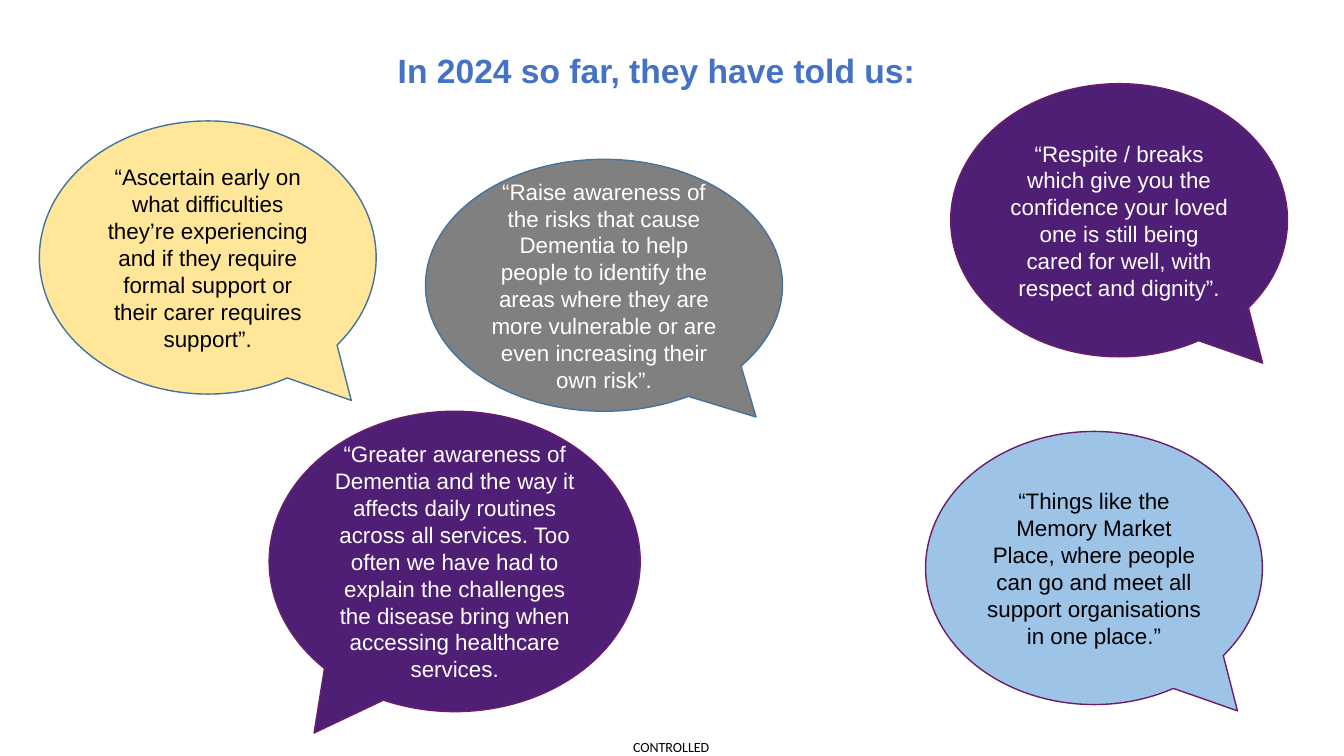
import pptx
import pptx.util
from pptx.dml.color import RGBColor
from pptx.enum.shapes import MSO_SHAPE
from pptx.enum.text import MSO_ANCHOR, PP_ALIGN

SLIDE_WIDTH = pptx.util.Inches(13.33)
SLIDE_HEIGHT = pptx.util.Inches(7.5)

BLACK, WHITE = "000000", "FFFFFF"
BLUE_EDGE, PURPLE_EDGE, PURPLE = "43739E", "6C1D6A", "4F1F76"
TAIL_RIGHT, TAIL_LEFT = (0.426, 0.523), (-0.379, 0.571)
BUBBLE_SIZE = (25.06, 36.13)

# Quotes: box in percent of the slide, tail, fill, edge, text colour, wording
QUOTES = [
    ((31.66, 21.07, 26.56, 33.33), TAIL_RIGHT, "808080", BLUE_EDGE, WHITE,
     "“Raise awareness of the risks that cause Dementia to help people to "
     "identify the areas where they are more vulnerable or are even "
     "increasing their own risk”."),
    ((2.93, 16, *BUBBLE_SIZE), TAIL_RIGHT, "FFE699", BLUE_EDGE, BLACK,
     "“Ascertain early on what difficulties they’re experiencing and if they "
     "require formal support or their carer requires support”."),
    ((20.03, 54.4, 27.61, 39.73), TAIL_LEFT, PURPLE, PURPLE_EDGE, WHITE,
     "“Greater awareness of Dementia and the way it affects daily routines "
     "across all services. Too often we have had to explain the challenges "
     "the disease bring when accessing healthcare services."),
    ((70.74, 11.07, *BUBBLE_SIZE), TAIL_RIGHT, PURPLE, PURPLE_EDGE, WHITE,
     "“Respite / breaks which give you the confidence your loved one is "
     "still being cared for well, with respect and dignity”."),
    ((68.87, 57.07, *BUBBLE_SIZE), TAIL_RIGHT, "9DC3E6", PURPLE_EDGE, BLACK,
     "“Things like the Memory Market Place, where people can go and meet all "
     "support organisations in one place.”"),
]


def color(hex_string):
    return RGBColor.from_string(hex_string)


def place(box):
    """Turn percentages of the slide into left, top, width and height."""
    left, top, width, height = box
    return (int(SLIDE_WIDTH * left / 100), int(SLIDE_HEIGHT * top / 100),
            int(SLIDE_WIDTH * width / 100), int(SLIDE_HEIGHT * height / 100))


def write(frame, text, size=16, font="Arial", ink=BLACK, bold=False,
          align=PP_ALIGN.CENTER, anchor=MSO_ANCHOR.MIDDLE, wrap=True):
    frame.word_wrap = wrap
    frame.vertical_anchor = anchor
    paragraph = frame.paragraphs[0]
    paragraph.alignment = align
    run = paragraph.add_run()
    run.text = text
    run.font.size = pptx.util.Pt(size)
    run.font.name = font
    run.font.bold = bold
    run.font.color.rgb = color(ink)


def add_heading(slide, box):
    heading = slide.shapes.add_textbox(*place(box))
    write(heading.text_frame, "In 2024 so far, they have told us:",
          size=24, ink="4472C4", bold=True, wrap=False)


def add_marking(slide, box):
    frame = slide.shapes.add_textbox(*place(box)).text_frame
    frame.margin_left = frame.margin_right = 0
    frame.margin_top = frame.margin_bottom = 0
    write(frame, "CONTROLLED", size=10, font="Calibri",
          align=PP_ALIGN.LEFT, anchor=MSO_ANCHOR.TOP, wrap=False)


def add_quote(slide, box, tail, fill, edge, ink, wording):
    bubble = slide.shapes.add_shape(MSO_SHAPE.OVAL_CALLOUT, *place(box))
    bubble.adjustments[0], bubble.adjustments[1] = tail
    bubble.shadow.inherit = False
    bubble.fill.solid()
    bubble.fill.fore_color.rgb = color(fill)
    bubble.line.color.rgb = color(edge)
    bubble.line.width = pptx.util.Pt(1)
    write(bubble.text_frame, wording, ink=ink)


def main():
    deck = pptx.Presentation()
    deck.slide_width, deck.slide_height = SLIDE_WIDTH, SLIDE_HEIGHT
    slide = deck.slides.add_slide(deck.slide_layouts[6])

    add_marking(slide, (47.11, 97.73, 5.93, 2.27))
    add_heading(slide, (28.66, 5.87, 40.36, 6.67))
    for quote in QUOTES:
        add_quote(slide, *quote)

    deck.save("out.pptx")


if __name__ == "__main__":
    main()
